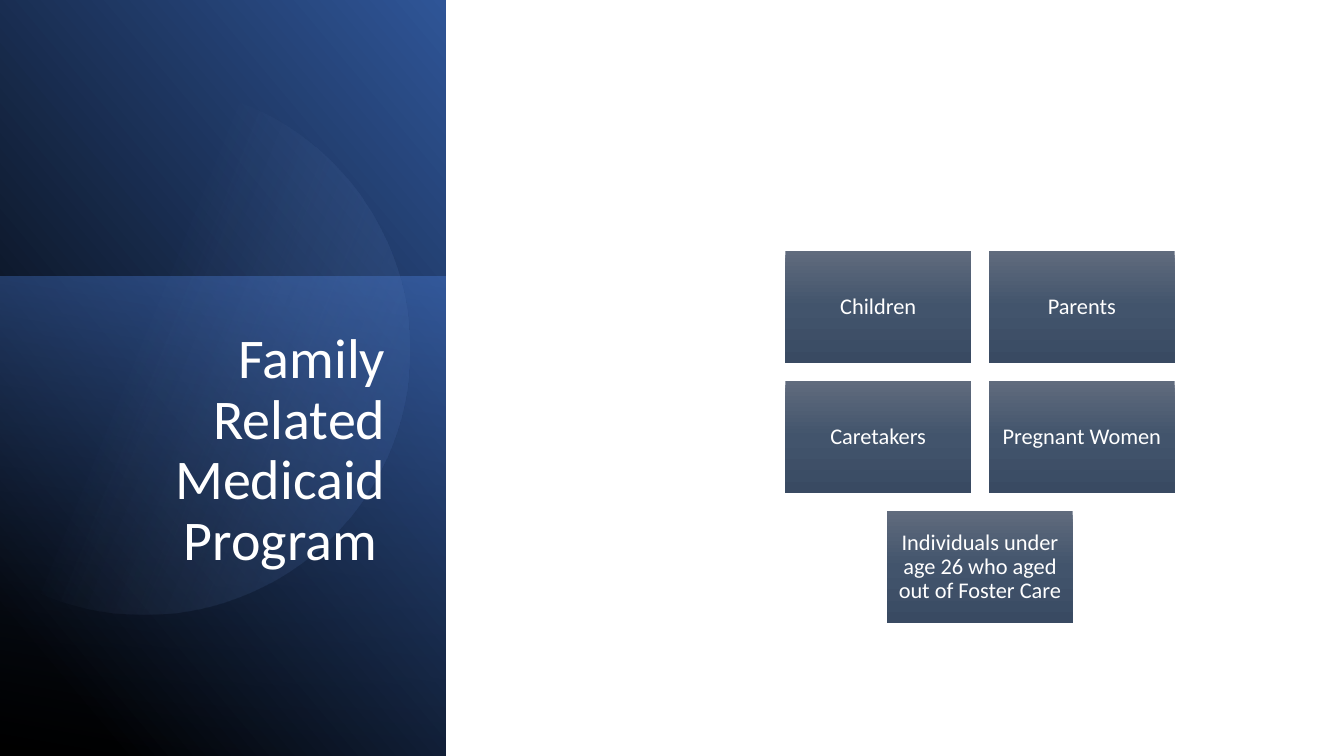
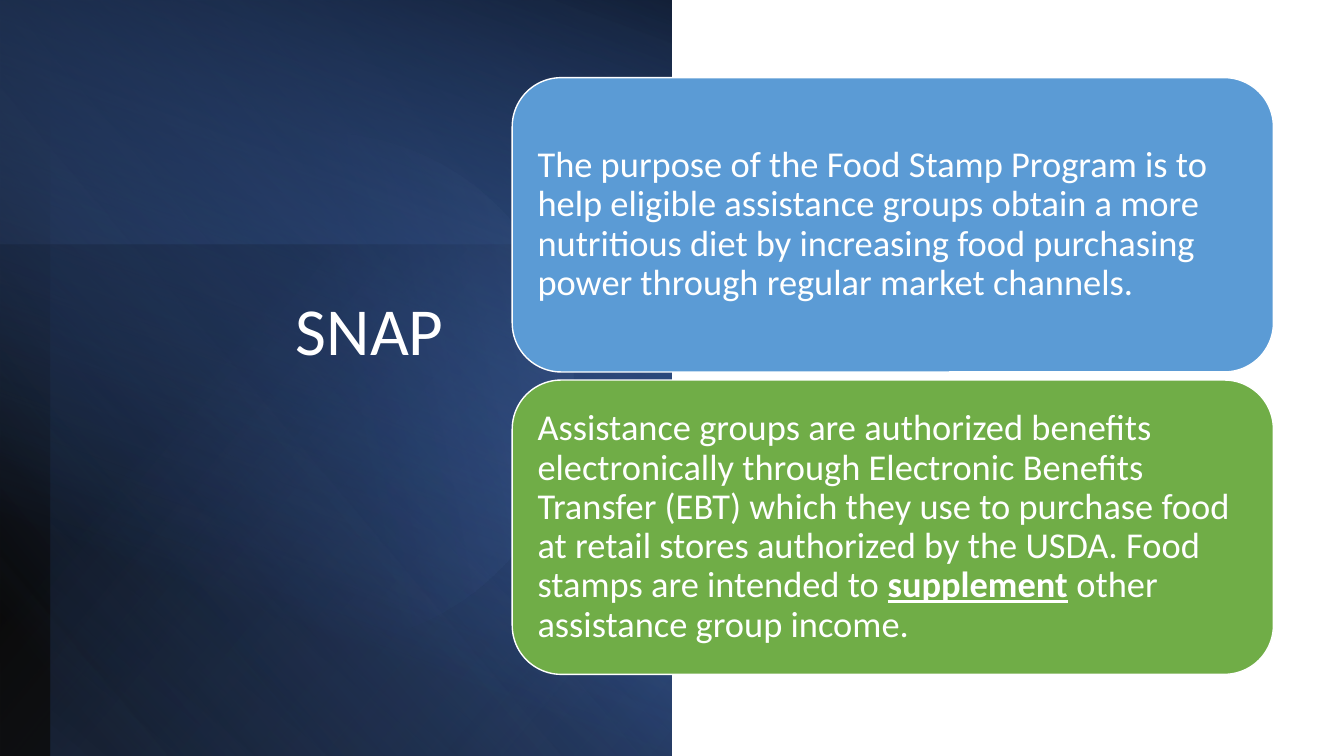
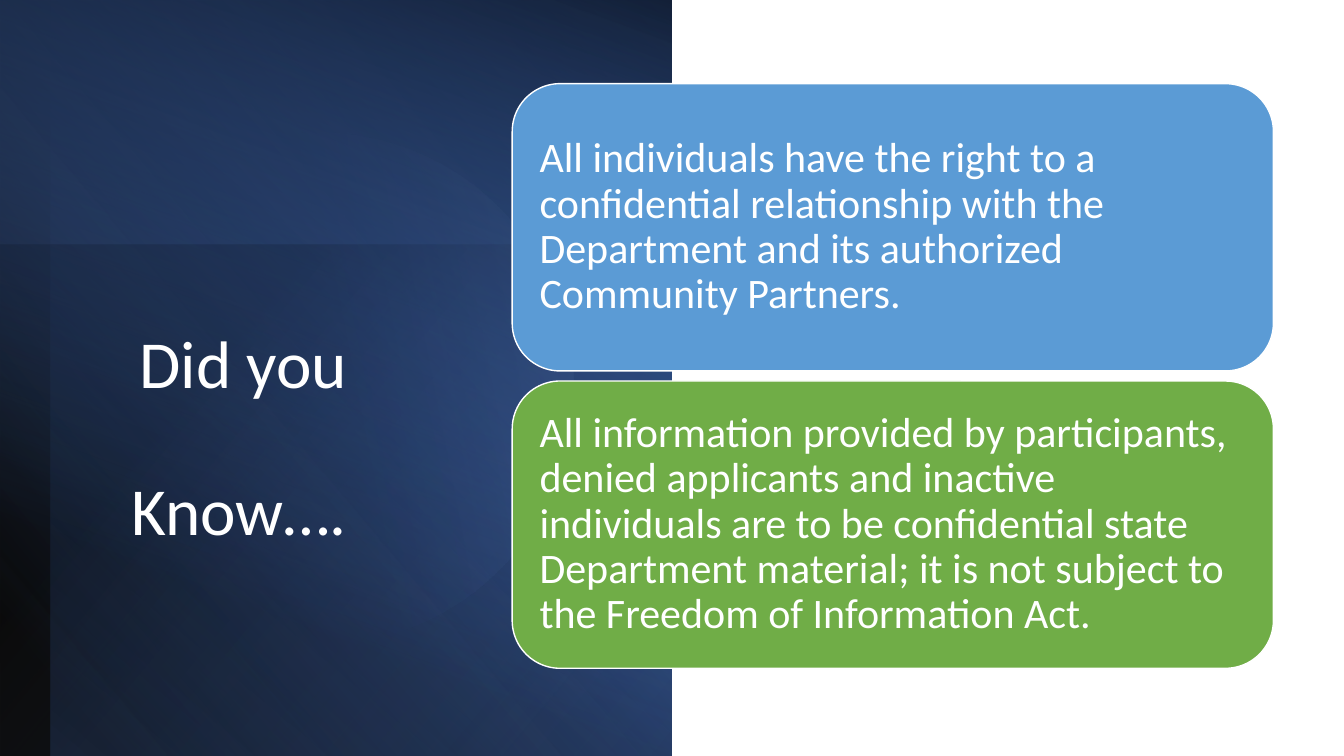
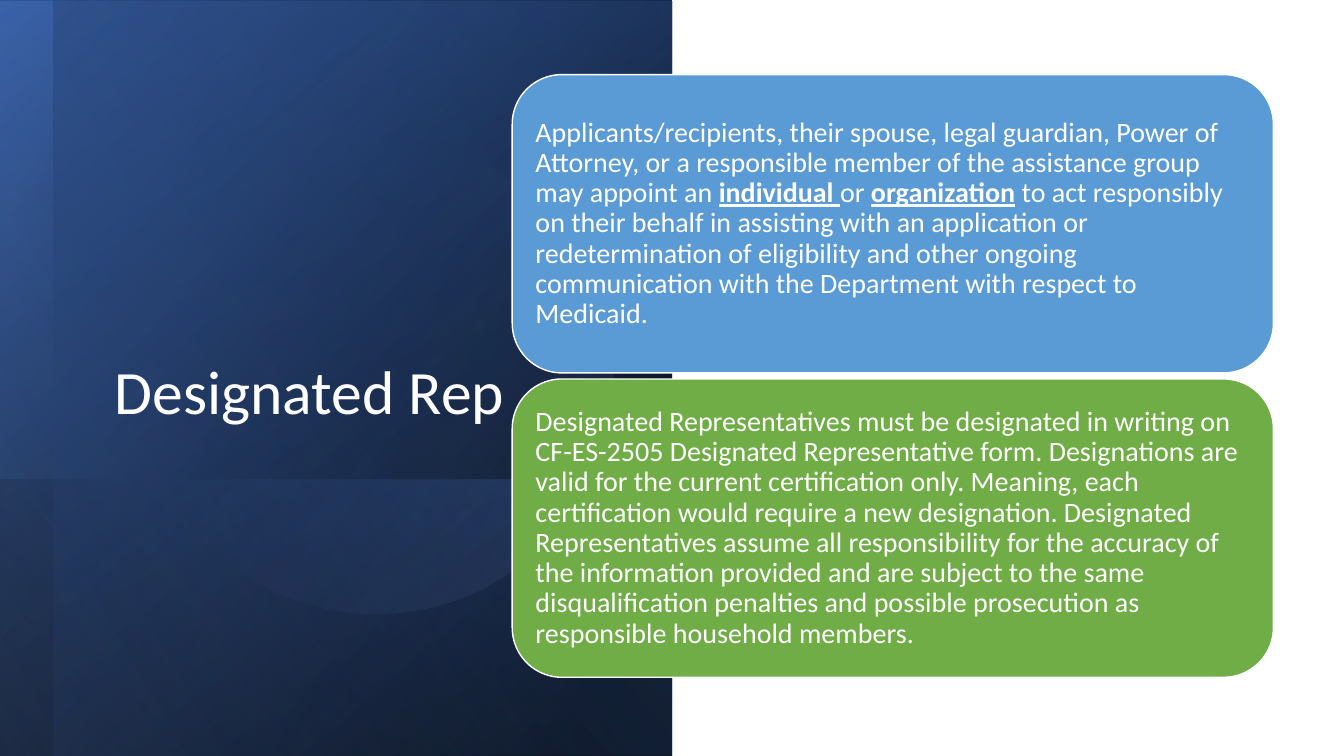
from math import cos, radians, sin

from pptx import Presentation
from pptx.dml.color import RGBColor
from pptx.enum.shapes import MSO_SHAPE
from pptx.enum.text import MSO_ANCHOR, PP_ALIGN
from pptx.oxml import parse_xml
from pptx.oxml.ns import nsdecls, qn
from pptx.util import Inches, Pt

FONT = "Calibri"
WHITE = RGBColor(0xFF, 0xFF, 0xFF)
BLACK = RGBColor(0x00, 0x00, 0x00)
BLUE = RGBColor(0x44, 0x72, 0xC4)
DARK_BLUE = RGBColor(0x2F, 0x55, 0x97)
NAVY = RGBColor(0x20, 0x38, 0x64)
SOFT_BLUE = RGBColor(0x8F, 0xAA, 0xDC)
PALE_BLUE = RGBColor(0xB4, 0xC7, 0xE7)
SLATE_LIGHT = RGBColor(0x60, 0x6B, 0x7D)
SLATE = RGBColor(0x42, 0x54, 0x6C)
SLATE_DARK = RGBColor(0x39, 0x4A, 0x62)
CARD_COLORS = [RGBColor(0x5B, 0x9B, 0xD5), RGBColor(0x70, 0xAD, 0x47)]

RECT, OVAL = MSO_SHAPE.RECTANGLE, MSO_SHAPE.OVAL

# Panel layers: shape, (left, top, width, height), rotation, flipped,
# gradient stops (position %, colour, opacity %), gradient angle
PROGRAM_PANEL = [
    (RECT, (-1.55, 1.55, 7.52, 4.42), 90, True,
     [(11, BLACK, 100), (100, DARK_BLUE, 100)], 310),
    (RECT, (-0.17, 2.91, 4.76, 4.42), 270, False,
     [(0, BLUE, 50), (100, NAVY, 0)], 190),
]
TOPIC_PANEL = [
    (RECT, (0, 0, 6.66, 7.5), 180, True,
     [(8, BLACK, 94), (100, BLUE, 100)], 40),
    (RECT, (-0.17, 0.67, 7.5, 6.16), 270, True,
     [(0, BLUE, 23), (71, NAVY, 0), (100, BLACK, 0)], 140),
    (RECT, (-0.01, 2.43, 6.67, 5.07), 180, True,
     [(0, BLUE, 0), (72, BLACK, 21)], 140),
    (OVAL, (0.62, 1.32, 5.07, 5.07), 69, False,
     [(53, BLUE, 0), (100, PALE_BLUE, 15)], 280),
    (RECT, (-0.01, 0, 6.67, 7.51), 180, True,
     [(24, BLUE, 0), (100, BLACK, 71)], 70),
]
REP_PANEL = [
    (RECT, (-0.42, 0.42, 7.5, 6.67), 90, True,
     [(8, BLACK, 100), (100, DARK_BLUE, 100)], 50),
    (RECT, (-0.14, 0.14, 6.94, 6.69), 90, True,
     [(0, BLACK, 0), (99, BLUE, 46)], 30),
    (RECT, (1.96, 2.79, 2.74, 6.68), 90, True,
     [(2, BLUE, 29), (100, BLACK, 30)], 130),
    (OVAL, (1.36, 1.37, 4.72, 4.72), 101.6, False,
     [(39, BLUE, 0), (100, SOFT_BLUE, 15)], 290),
    (RECT, (-0.42, 0.42, 7.5, 6.66), 90, True,
     [(0, BLACK, 0), (99, SOFT_BLUE, 11)], 120),
    (RECT, (0.53, 0.01, 6.13, 7.5), 0, False,
     [(21, DARK_BLUE, 6), (99, NAVY, 33)], 230),
]

# Slides: panel, title lines, title box, title size, alignment, anchor
SLIDES = [
    (PROGRAM_PANEL, ["Family Related Medicaid Program\t"],
     (0.58, 3.23, 3.34, 3.86), 40, PP_ALIGN.RIGHT, MSO_ANCHOR.TOP),
    (TOPIC_PANEL, ["SNAP"],
     (2.4, 2.9, 2.1, 1.68), 48, PP_ALIGN.RIGHT, MSO_ANCHOR.TOP),
    (TOPIC_PANEL, ["Did you", "Know…."],
     (1.17, 3.23, 2.37, 2.06), 48, PP_ALIGN.RIGHT, MSO_ANCHOR.TOP),
    (REP_PANEL, ["Designated Rep"],
     (1.04, 0.5, 4.92, 3.79), 44, PP_ALIGN.LEFT, MSO_ANCHOR.BOTTOM),
]

# Cards: height, gap, inset, text size, texts (*emphasis*)
CARDS = [
    (2.92, 0.08, 0.25, 26, [
        "The purpose of the Food Stamp Program is to help eligible assistance "
        "groups obtain a more nutritious diet by increasing food purchasing "
        "power through regular market channels.",
        "Assistance groups are authorized benefits electronically through "
        "Electronic Benefits Transfer (EBT) which they use to purchase food at "
        "retail stores authorized by the USDA. Food stamps are intended to "
        "*supplement* other assistance group income."]),
    (2.85, 0.1, 0.27, 30, [
        "All individuals have the right to a confidential relationship with "
        "the Department and its authorized Community Partners.",
        "All information provided by participants, denied applicants and "
        "inactive individuals are to be confidential state Department "
        "material; it is not subject to the Freedom of Information Act."]),
    (2.96, 0.06, 0.23, 20, [
        "Applicants/recipients, their spouse, legal guardian, Power of "
        "Attorney, or a responsible member of the assistance group may appoint "
        "an *individual *or *organization* to act responsibly on their behalf "
        "in assisting with an application or redetermination of eligibility "
        "and other ongoing communication with the Department with respect to "
        "Medicaid.",
        "Designated Representatives must be designated in writing on "
        "CF-ES-2505 Designated Representative form. Designations are valid for "
        "the current certification only. Meaning, each certification would "
        "require a new designation. Designated Representatives assume all "
        "responsibility for the accuracy of the information provided and are "
        "subject to the same disqualification penalties and possible "
        "prosecution as responsible household members."]),
]


def fill_gradient(sp, stops, angle):
    """Give a shape a clockwise linear gradient, with no line or shadow."""
    sp.shadow.inherit = False
    sp.line.fill.background()
    sp.fill.background()
    gs = "".join(
        f'<a:gs pos="{pos * 1000}"><a:srgbClr val="{color}">'
        f'<a:alpha val="{opacity * 1000}"/></a:srgbClr></a:gs>'
        for pos, color, opacity in stops)
    grad = parse_xml(
        f'<a:gradFill {nsdecls("a")} rotWithShape="1"><a:gsLst>{gs}</a:gsLst>'
        f'<a:lin ang="{angle * 60000}" scaled="0"/></a:gradFill>')
    sp_pr = sp.element.spPr
    sp_pr.replace(sp_pr.find(qn("a:noFill")), grad)


def write_text(sp, lines, size, align, anchor, inset_x=0.1, inset_y=0.05):
    """Write one paragraph a line; parts between asterisks are emphasised."""
    tf = sp.text_frame
    tf.word_wrap = True
    tf.vertical_anchor = anchor
    tf.margin_left = tf.margin_right = Inches(inset_x)
    tf.margin_top = tf.margin_bottom = Inches(inset_y)
    for i, line in enumerate(lines):
        p = tf.add_paragraph() if i else tf.paragraphs[0]
        p.alignment = align
        p.line_spacing = 0.9
        p.space_before = Pt(size * 1.1 if i else 0)
        p.font.name, p.font.size = FONT, Pt(size)
        p.font.color.rgb = WHITE
        for j, part in enumerate(line.split("*")):
            r = p.add_run()
            r.text = part
            if j % 2:
                r.font.bold = r.font.underline = True


prs = Presentation()
prs.slide_width, prs.slide_height = Inches(13.33), Inches(7.5)

for panel, title, title_box, size, align, anchor in SLIDES:
    s = prs.slides.add_slide(prs.slide_layouts[6])
    for kind, box, rotation, flipped, stops, angle in panel:
        sp = s.shapes.add_shape(kind, *map(Inches, box))
        sp.rotation = rotation
        if flipped:
            sp.element.spPr.find(qn("a:xfrm")).set("flipH", "1")
        fill_gradient(sp, stops, angle)

    if panel is PROGRAM_PANEL:
        # Disc cut off by the left edge of the slide
        disc_x, disc_y, radius = 1.43, 3.47, 2.63
        points = [(Inches(disc_x + radius * cos(radians(a))),
                   Inches(disc_y + radius * sin(radians(a))))
                  for a in range(-123, 124, 3)]
        outline = s.shapes.build_freeform(*points[0])
        outline.add_line_segments(points[1:])
        fill_gradient(outline.convert_to_shape(),
                      [(39, SOFT_BLUE, 0), (100, DARK_BLUE, 26)], 22)

    sp = s.shapes.add_textbox(*map(Inches, title_box))
    write_text(sp, title, size, align, anchor)

# Groups covered, in centred rows
box_w, box_h, box_gap = 1.84, 1.11, 0.18
rows_center, rows_top = 9.72, 2.49
rows = [["Children", "Parents"], ["Caretakers", "Pregnant Women"],
        ["Individuals under age 26 who aged out of Foster Care"]]
for i, row in enumerate(rows):
    row_left = rows_center - (len(row) * (box_w + box_gap) - box_gap) / 2
    for j, label in enumerate(row):
        sp = prs.slides[0].shapes.add_shape(
            RECT, Inches(row_left + j * (box_w + box_gap)),
            Inches(rows_top + i * (box_h + box_gap)), Inches(box_w), Inches(box_h))
        fill_gradient(sp, [(0, SLATE_LIGHT, 100), (50, SLATE, 100),
                           (100, SLATE_DARK, 100)], 90)
        write_text(sp, [label], 16, PP_ALIGN.CENTER, MSO_ANCHOR.MIDDLE, 0.07, 0.07)

# Pairs of cards, stacked around one middle line
card_left, card_w, cards_middle = 5.08, 7.55, 3.73
for i, (height, gap, inset, size, texts) in enumerate(CARDS, start=1):
    top = cards_middle - gap / 2 - height
    for j, (text, color) in enumerate(zip(texts, CARD_COLORS)):
        sp = prs.slides[i].shapes.add_shape(
            MSO_SHAPE.ROUNDED_RECTANGLE, Inches(card_left),
            Inches(top + j * (height + gap)), Inches(card_w), Inches(height))
        sp.shadow.inherit = False
        sp.fill.solid()
        sp.fill.fore_color.rgb = color
        sp.line.color.rgb = WHITE
        sp.line.width = Pt(1)
        # The rounded corners already inset the text by 0.29 of their radius
        corner = 0.29 * sp.adjustments[0] * height
        write_text(sp, [text], size, PP_ALIGN.LEFT, MSO_ANCHOR.MIDDLE,
                   inset - corner, inset - corner)

prs.save("out.pptx")
